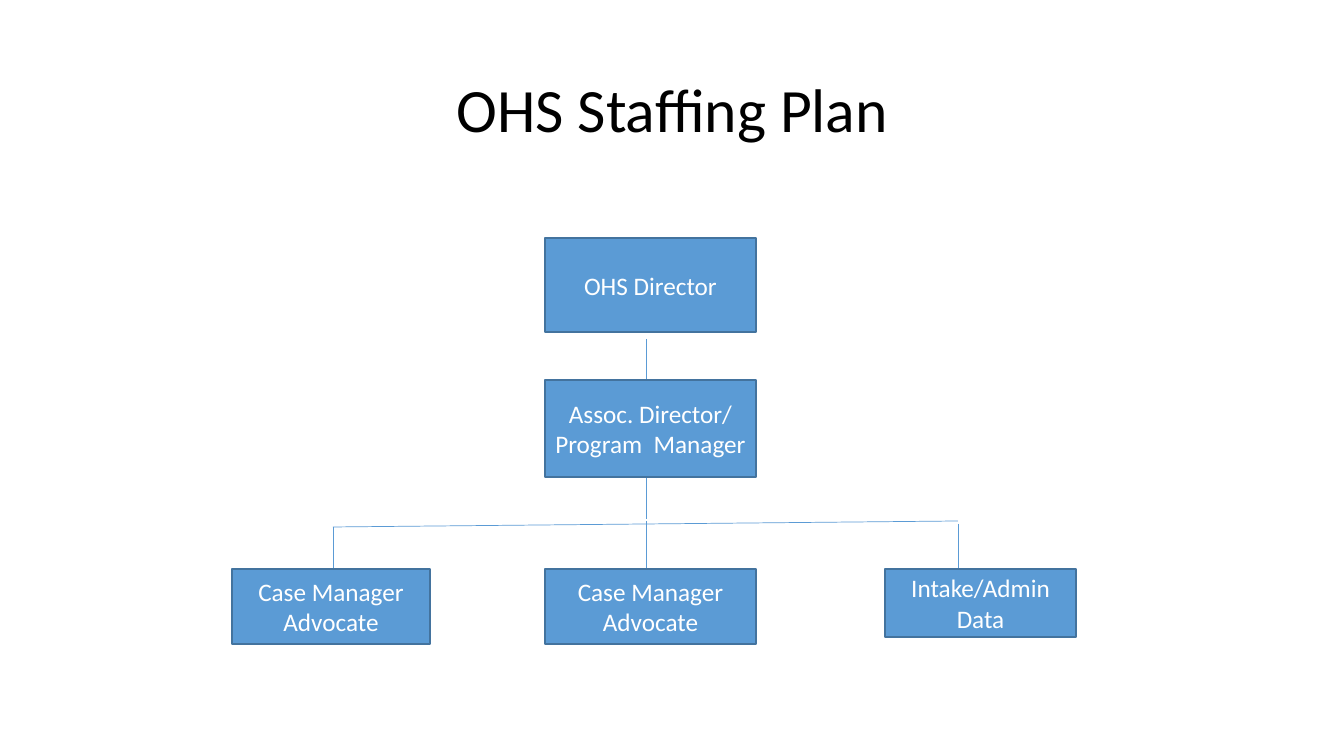
from pptx import Presentation
from pptx.dml.color import RGBColor
from pptx.enum.shapes import MSO_CONNECTOR as Connector, MSO_SHAPE as Shape
from pptx.enum.text import MSO_ANCHOR as Anchor, PP_ALIGN as Align
from pptx.oxml.ns import qn
from pptx.util import Emu, Pt

TITLE = "OHS Staffing Plan"
TITLE_AREA = (93, 40, 1159, 146)

# Lines of text, then left, top, width, height in px
MID_LEFT, MID_WIDTH, STAFF_TOP = 545, 211, 569
POSITIONS = [
    (["OHS Director"], (MID_LEFT, 238, MID_WIDTH, 94)),
    (["Assoc. Director/", "Program  Manager"], (MID_LEFT, 380, MID_WIDTH, 97)),
    (["Case Manager", "Advocate"], (232, STAFF_TOP, 198, 75)),
    (["Case Manager", "Advocate"], (MID_LEFT, STAFF_TOP, MID_WIDTH, 75)),
    (["Intake/Admin", "Data"], (885, STAFF_TOP, 191, 68)),
]

# Start x, start y, end x, end y in px
LEFT_X, MID_X, RIGHT_X = 333, 646, 958
LINKS = [
    (MID_X, 339, MID_X, 394),
    (MID_X, 477, MID_X, 519),
    (LEFT_X, 527, RIGHT_X, 521),
    (LEFT_X, 527, LEFT_X, STAFF_TOP),
    (MID_X, 521, MID_X, STAFF_TOP),
    (RIGHT_X, 524, RIGHT_X, STAFF_TOP),
]

FONT = "Calibri"
BLUE, EDGE, WHITE, BLACK = "5B9BD5", "43739E", "FFFFFF", "000000"
PX_PER_INCH = 100.8


def px(*lengths):
    return [Emu(round(length * 914400 / PX_PER_INCH)) for length in lengths]


def color(hex_code):
    return RGBColor.from_string(hex_code)


def write(shape, lines, size, hex_code, spacing=1.0):
    """Fill a shape with centred paragraphs, one for each line."""
    frame = shape.text_frame
    frame.word_wrap = True
    frame.vertical_anchor = Anchor.MIDDLE
    frame.text = "\n".join(lines)
    for para in frame.paragraphs:
        para.alignment = Align.CENTER
        para.line_spacing = spacing
        font = para.runs[0].font
        for name, value in {"name": FONT, "size": Pt(size)}.items():
            setattr(font, name, value)
        font.color.rgb = color(hex_code)


def add_link(page, ends):
    link = page.shapes.add_connector(Connector.STRAIGHT, *px(*ends))
    link.line.color.rgb = color(BLUE)
    link.line.width = Pt(0.5)
    properties = link.element.spPr
    properties.append(properties.makeelement(qn("a:effectLst"), {}))


def add_position(page, lines, area):
    box = page.shapes.add_shape(Shape.RECTANGLE, *px(*area))
    box.shadow.inherit = False
    box.fill.solid()
    box.fill.fore_color.rgb = color(BLUE)
    box.line.color.rgb = color(EDGE)
    box.line.width = Pt(1)
    write(box, lines, 18, WHITE)


def main():
    deck = Presentation()
    deck.slide_width, deck.slide_height = px(1344, 756)
    page = deck.slides.add_slide(deck.slide_layouts[6])
    title = page.shapes.add_textbox(*px(*TITLE_AREA))
    write(title, [TITLE], 44, BLACK, 0.9)
    for ends in LINKS:
        add_link(page, ends)
    for lines, area in POSITIONS:
        add_position(page, lines, area)
    deck.save("out.pptx")


if __name__ == "__main__":
    main()
